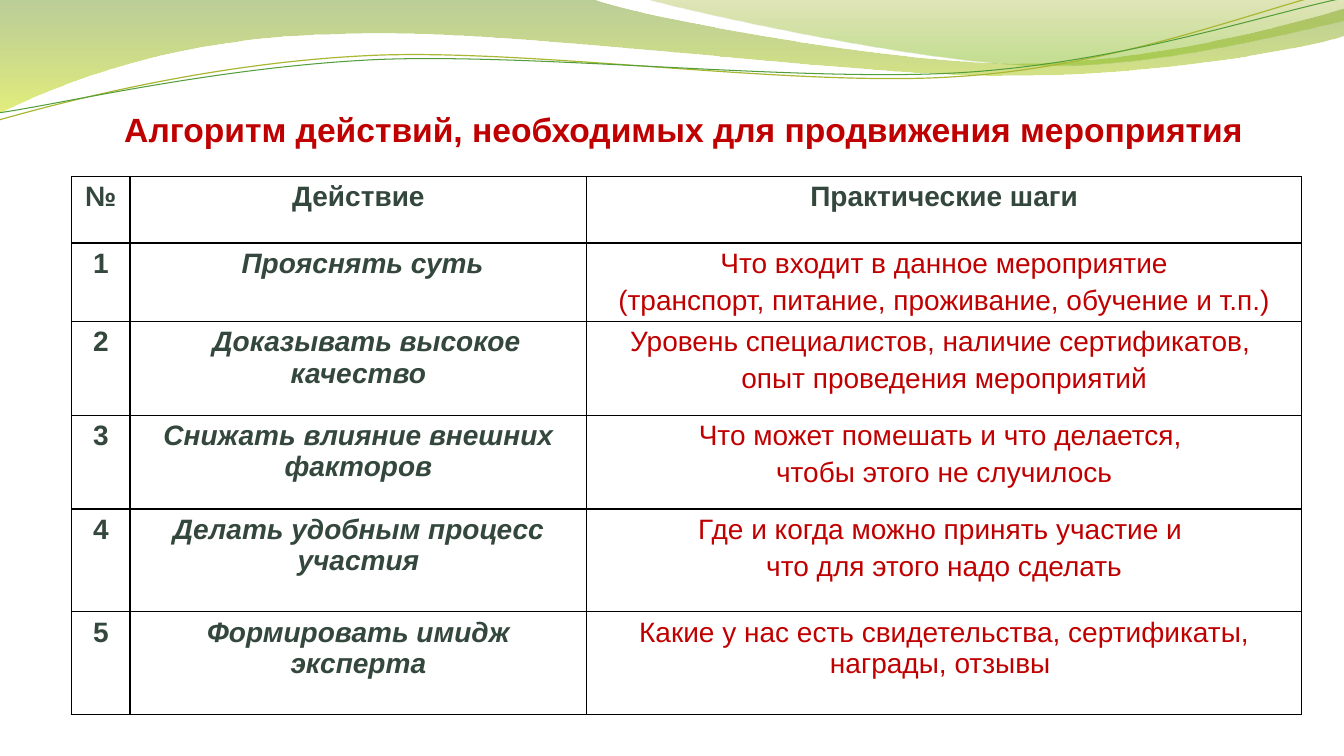
from math import cos, radians, sin

from lxml.etree import SubElement
from pptx import Presentation
from pptx.dml.color import RGBColor
from pptx.enum.text import MSO_ANCHOR, PP_ALIGN
from pptx.oxml.ns import qn
from pptx.util import Inches, Pt

# Content
TITLE = "Алгоритм действий, необходимых для продвижения мероприятия"
HEADER = ("№", "Действие", "Практические шаги")
ACTIONS = [
    ("Прояснять суть ",
     ["Что входит в данное мероприятие",
      "(транспорт, питание, проживание, обучение и т.п.)"]),
    ("Доказывать высокое качество",
     ["Уровень специалистов, наличие сертификатов, ",
      "опыт проведения мероприятий"]),
    ("Снижать влияние внешних факторов",
     ["Что может помешать и что делается, ",
      "чтобы этого не случилось"]),
    ("Делать удобным процесс участия",
     ["Где и когда можно принять участие и ",
      "что для этого надо сделать"]),
    ("Формировать имидж эксперта",
     ["Какие у нас есть свидетельства, сертификаты, награды, отзывы "]),
]
INDENTED_ACTIONS = 2  # the first actions have a first-line indent
COLUMN_WIDTHS = (0.58, 4.53, 7.09)
ROW_HEIGHTS = (0.66, 0.78, 0.93, 0.93, 1.02, 1.02)

FONT = "Arial"
COLORS = {
    "accent": "C00000", "text": "34473D", "border": "000000",
    "wave_top": "69921C", "wave_bottom": "CCE10F",
    "fold_top": "9BAA1A", "fold_bottom": "81BA16",
    "olive_line": "A9B733", "green_line": "549E39",
}

# Waves: box, then start point, lines (2 numbers) and Bezier curves (6 numbers)
# Gradient stops: colour, position, opacity in percent
FILLED_WAVES = [
    ((-0.02, -0.01, 13.36, 1.14),
     [(0, 0), (5.87, -0.01), (6.34, 0.17, 8.84, 0.63, 10.11, 0.63),
      (11.37, 0.63, 12.77, 0.26, 13.33, 0.09), (13.34, 0.36),
      (13.11, 0.44, 11.59, 0.76, 9.94, 0.75),
      (8.29, 0.75, 5.09, 0.28, 3.43, 0.34),
      (1.72, 0.36, 0.61, 0.83, -0.02, 1.13), (0, 0)],
     [("wave_top", 0, 45), ("wave_bottom", 1, 55)]),
    ((6.38, -0.01, 6.94, 0.7),
     [(6.38, -0.01), (6.79, 0.11, 9.09, 0.62, 10.25, 0.65),
      (11.4, 0.69, 12.82, 0.32, 13.33, 0.21), (13.33, 0), (6.38, -0.01)],
     [("fold_top", 0, 30), ("fold_bottom", 0.8, 45)]),
]
LINE_TILT = -2.7
LINE_WAVES = [
    ((-0.03, 0.22, 13.36, 0.71),
     [(-0.01, 1.19), (0.63, 1.01, 2.1, 0.62, 3.69, 0.55),
      (5.27, 0.48, 7.89, 0.87, 9.49, 0.76),
      (11.1, 0.66, 12.51, 0.08, 13.3, -0.1)], "olive_line", 0.85),
    ((-0.02, 0.3, 13.38, 0.58),
     [(-0.01, 1.12), (0.62, 1.03, 2.18, 0.66, 3.77, 0.59),
      (5.37, 0.53, 7.96, 0.82, 9.55, 0.72),
      (11.14, 0.62, 12.55, 0.14, 13.33, -0.02)], "green_line", 0.75),
]


def color(name):
    return RGBColor.from_string(COLORS[name])


def add_wave(slide, box, outline, closed, tilt=0):
    """Draw an outline of lines and curves inside its tilted box."""
    left, top, width, height = box
    builder = slide.shapes.build_freeform(Inches(left), Inches(top))
    builder.add_line_segments([(Inches(left + width), Inches(top + height))], close=False)
    wave = builder.convert_to_shape()
    wave.rotation = tilt % 360
    wave.shadow.inherit = False

    outline_xml = next(wave._element.iter(qn("a:path")))
    for segment in list(outline_xml):
        outline_xml.remove(segment)
    turn = radians(-tilt)
    for number, segment in enumerate(outline):
        tag = "a:moveTo" if number == 0 else "a:lnTo" if len(segment) == 2 else "a:cubicBezTo"
        segment_xml = SubElement(outline_xml, qn(tag))
        for x, y in zip(segment[::2], segment[1::2]):
            dx, dy = x - left - width / 2, y - top - height / 2
            SubElement(segment_xml, qn("a:pt"),
                       x=str(Inches(width / 2 + dx * cos(turn) - dy * sin(turn))),
                       y=str(Inches(height / 2 + dx * sin(turn) + dy * cos(turn))))
    if closed:
        SubElement(outline_xml, qn("a:close"))
    return wave


def format_run(run, size, color_name, bold=False, italic=False):
    run.font.name = FONT
    run.font.size = Pt(size)
    run.font.bold = bold
    run.font.italic = italic
    run.font.color.rgb = color(color_name)


def fill_cell(cell, lines, color_name, bold, italic=False, indent=0, space_percent=0):
    cell.text_frame.text = "\n".join(lines)
    for paragraph in cell.text_frame.paragraphs:
        paragraph.alignment = PP_ALIGN.CENTER
        paragraph_properties = paragraph._p.get_or_add_pPr()
        if indent:
            paragraph_properties.set("indent", str(Inches(indent)))
        if space_percent:
            space = SubElement(paragraph_properties, qn("a:spcBef"))
            SubElement(space, qn("a:spcPct"), val=str(space_percent * 1000))
        format_run(paragraph.runs[0], 20, color_name, bold, italic)
    properties = cell._tc.get_or_add_tcPr()
    for side in ("a:lnL", "a:lnR", "a:lnT", "a:lnB"):
        border = SubElement(properties, qn(side), w=str(Pt(1)))
        border_fill = SubElement(border, qn("a:solidFill"))
        SubElement(border_fill, qn("a:srgbClr"), val=COLORS["border"])
    cell.fill.background()


def main():
    deck = Presentation()
    deck.slide_width, deck.slide_height = Inches(13.33), Inches(7.5)
    slide = deck.slides.add_slide(deck.slide_layouts[5])

    # Waves at the top
    for box, outline, stops in FILLED_WAVES:
        wave = add_wave(slide, box, outline, closed=True)
        wave.line.fill.background()
        wave.fill.gradient()
        wave.fill.gradient_angle = 270
        for stop, (name, position, _) in zip(wave.fill.gradient_stops, stops):
            stop.color.rgb = color(name)
            stop.position = position
        for shade, (_, _, opacity) in zip(wave._element.iter(qn("a:srgbClr")), stops):
            SubElement(shade, qn("a:alpha"), val=str(opacity * 1000))
    for box, outline, name, width in LINE_WAVES:
        wave = add_wave(slide, box, outline, closed=False, tilt=LINE_TILT)
        wave.fill.background()
        wave.line.color.rgb = color(name)
        wave.line.width = Pt(width)

    # Title
    title = slide.shapes.title
    title.left, title.top = Inches(0.36), Inches(1.03)
    title.width, title.height = Inches(12.84), Inches(0.5)
    title.text_frame.text = TITLE
    title.text_frame.vertical_anchor = MSO_ANCHOR.MIDDLE
    heading = title.text_frame.paragraphs[0]
    heading.alignment = PP_ALIGN.CENTER
    format_run(heading.runs[0], 24, "accent", bold=True)

    # Table of actions
    steps = slide.shapes.add_table(
        len(ROW_HEIGHTS), len(COLUMN_WIDTHS), Inches(0.71), Inches(1.75),
        Inches(sum(COLUMN_WIDTHS)), Inches(sum(ROW_HEIGHTS))).table
    steps.first_row = steps.horz_banding = False
    for column, width in zip(steps.columns, COLUMN_WIDTHS):
        column.width = Inches(width)
    for row, height in zip(steps.rows, ROW_HEIGHTS):
        row.height = Inches(height)
    for column, label in enumerate(HEADER):
        fill_cell(steps.cell(0, column), [label], "text", bold=True)
    for number, (action, practice) in enumerate(ACTIONS, start=1):
        indent = 0.16 if number <= INDENTED_ACTIONS else 0
        fill_cell(steps.cell(number, 0), [str(number)], "text", bold=True)
        fill_cell(steps.cell(number, 1), [action], "text", True, True, indent)
        fill_cell(steps.cell(number, 2), practice, "accent", bold=False, space_percent=20)

    deck.save("out.pptx")


if __name__ == "__main__":
    main()
